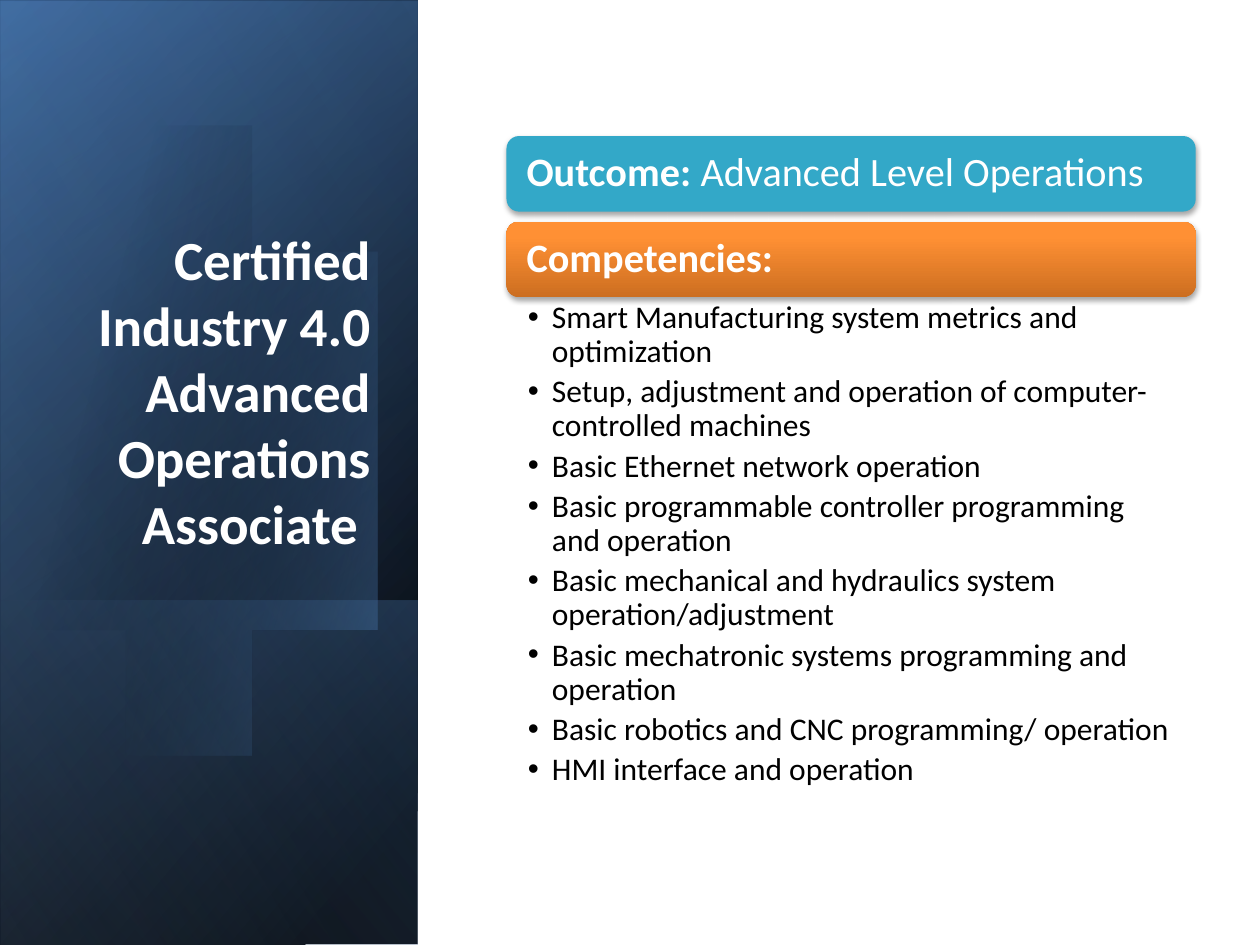
from lxml import etree
from pptx import Presentation
from pptx.dml.color import RGBColor
from pptx.enum.shapes import MSO_SHAPE
from pptx.enum.text import MSO_ANCHOR, MSO_AUTO_SIZE, PP_ALIGN
from pptx.oxml.ns import qn
from pptx.util import Inches, Pt

RECTANGLE, ROUNDED = MSO_SHAPE.RECTANGLE, MSO_SHAPE.ROUNDED_RECTANGLE
TOP, MIDDLE, BOTTOM = MSO_ANCHOR.TOP, MSO_ANCHOR.MIDDLE, MSO_ANCHOR.BOTTOM
LEFT, RIGHT, NO_FIT = PP_ALIGN.LEFT, PP_ALIGN.RIGHT, MSO_AUTO_SIZE.NONE

TITLE = "Certified Industry 4.0 Advanced Operations Associate "
COMPETENCIES = [
    "Smart Manufacturing system metrics and optimization",
    "Setup, adjustment and operation of computer-controlled machines",
    "Basic Ethernet network operation",
    "Basic programmable controller programming and operation",
    "Basic mechanical and hydraulics system operation/adjustment",
    "Basic mechatronic systems programming and operation",
    "Basic robotics and CNC programming/ operation",
    "HMI interface and operation",
]
BARS = [
    ([("Outcome: ", True), ("Advanced Level Operations", False)],
     [(0, "33A8C8", 100), (100, "33A8C8", 100)]),
    ([("Competencies:", True)],
     [(0, "CC6E20", 100), (80, "FF9034", 100), (100, "FF9136", 100)]),
]
BAR_LEFT, BAR_TOP, BAR_WIDTH, BAR_HEIGHT, BAR_STEP = 4.02, 1.08, 5.47, 0.6, 0.68

SIDE = (-2.09, 2.09, 7.5, 3.31)
PANELS = [
    (SIDE, 50, [(8, "000000", 100), (100, "376092", 100)]),
    ((-2.09, 2.11, 7.5, 3.31), 30, [(0, "000000", 0), (99, "4F81BD", 46)]),
    ((0.29, 4.48, 2.74, 3.31), 130, [(2, "4F81BD", 29), (100, "000000", 30)]),
]
SHEEN = (SIDE, 120, [(0, "000000", 0), (99, "95B3D7", 11)])
OVAL_STOPS = [(29, "000000", 0), (100, "4F81BD", 43)]
OVAL_START = (0.96, 1.14)
OVAL_CURVES = [
    [(1.71, 1.22), (2.44, 1.92), (2.73, 2.9)],
    [(3.07, 4.12), (2.62, 5.31), (1.71, 5.57)],
    [(1.14, 5.74), (0.53, 5.5), (0.07, 5)],
    [(-0.03, 4.88)],
    [(-0.25, 1.66)],
    [(-0.15, 1.54)],
    [(0.02, 1.37), (0.22, 1.25), (0.45, 1.18)],
    [(0.62, 1.13), (0.79, 1.12), (0.96, 1.14)],
]


def add_element(parent, tag, **attributes):
    """Append a DrawingML element with the given attributes."""
    element = etree.SubElement(parent, qn(tag))
    for name, value in attributes.items():
        element.set(name, str(value))
    return element


def add_color(parent, color, alpha):
    """Append a colour with its opacity in percent."""
    add_element(add_element(parent, "a:srgbClr", val=color), "a:alpha", val=alpha * 1000)


def set_gradient(shape, stops, angle):
    """Give a shape a linear gradient and no line or shadow."""
    shape.line.fill.background()
    shape.shadow.inherit = False
    gradient = etree.Element(qn("a:gradFill"), rotWithShape="1")
    stop_list = add_element(gradient, "a:gsLst")
    for position, color, alpha in stops:
        add_color(add_element(stop_list, "a:gs", pos=position * 1000), color, alpha)
    add_element(gradient, "a:lin", ang=angle * 60000, scaled=0)
    properties = shape._element.spPr
    properties.find(qn("a:ln")).addprevious(gradient)


def add_panel(slide, box, angle, stops):
    """Add a mirrored rectangle turned by a quarter."""
    panel = slide.shapes.add_shape(RECTANGLE, *map(Inches, box))
    panel.rotation = 90
    panel._element.spPr.find(qn("a:xfrm")).set("flipH", "1")
    set_gradient(panel, stops, angle)


def curve_points(start, curves, steps=24):
    """Yield points along joined straight lines and cubic curves."""
    for curve in curves:
        if len(curve) == 1:
            yield curve[0]
        else:
            controls = [start, *curve]
            for step in range(1, steps + 1):
                t = step / steps
                weights = ((1 - t) ** 3, 3 * t * (1 - t) ** 2, 3 * t * t * (1 - t), t ** 3)
                yield tuple(sum(w * point[axis] for w, point in zip(weights, controls))
                            for axis in (0, 1))
        start = curve[-1]


def add_oval(slide):
    """Add the translucent tilted oval."""
    builder = slide.shapes.build_freeform(*OVAL_START, scale=Inches(1))
    builder.add_line_segments(list(curve_points(OVAL_START, OVAL_CURVES)), close=True)
    set_gradient(builder.convert_to_shape(), OVAL_STOPS, 14)


def format_frame(frame, anchor, margins):
    """Set wrapping, anchor and the left, top, right and bottom margins."""
    names = ("margin_left", "margin_top", "margin_right", "margin_bottom")
    values = {"word_wrap": True, "auto_size": NO_FIT, "vertical_anchor": anchor,
              **dict(zip(names, map(Inches, margins)))}
    for name, value in values.items():
        setattr(frame, name, value)


def add_run(paragraph, text, size, color, bold=False):
    """Add a formatted run."""
    run = paragraph.add_run()
    run.text = text
    for name, value in {"name": "Calibri", "size": Pt(size), "bold": bold}.items():
        setattr(run.font, name, value)
    run.font.color.rgb = RGBColor.from_string(color)


def place(shape, box):
    """Move and size a shape in inches."""
    for name, value in zip(("left", "top", "width", "height"), box):
        setattr(shape, name, Inches(value))


def add_bar(slide, top, runs, stops):
    """Add a rounded heading bar with a soft shadow."""
    bar = slide.shapes.add_shape(
        ROUNDED, *map(Inches, (BAR_LEFT, top, BAR_WIDTH, BAR_HEIGHT)))
    set_gradient(bar, stops, 270)
    shadow = add_element(bar._element.spPr.find(qn("a:effectLst")), "a:outerShdw",
                         blurRad=Pt(3.1), dist=Pt(1.8), dir=90 * 60000, rotWithShape=0)
    add_color(shadow, "000000", 35)
    format_frame(bar.text_frame, MIDDLE, (0.13, 0.1, 0.13, 0.1))
    paragraph = bar.text_frame.paragraphs[0]
    paragraph.alignment, paragraph.line_spacing = LEFT, 0.9
    for text, bold in runs:
        add_run(paragraph, text, 23, "FFFFFF", bold)


def fill_title(title):
    """Place and write the slide title."""
    place(title, (0.48, 1.84, 2.56, 2.62))
    format_frame(title.text_frame, BOTTOM, (0.1, 0.05, 0.1, 0.05))
    paragraph = title.text_frame.paragraphs[0]
    paragraph.alignment = RIGHT
    add_run(paragraph, TITLE, 31.5, "FFFFFF", True)


def fill_list(body):
    """Place and write the bulleted competencies."""
    place(body, (BAR_LEFT, BAR_TOP + BAR_STEP + BAR_HEIGHT, BAR_WIDTH, 4.17))
    frame = body.text_frame
    format_frame(frame, TOP, (0.17, 0.03, 0.18, 0.03))
    for index, text in enumerate(COMPETENCIES):
        paragraph = frame.add_paragraph() if index else frame.paragraphs[0]
        values = {"level": 1, "line_spacing": 0.9, "space_before": Pt(0),
                  "space_after": Pt(3.6), "alignment": LEFT}
        for name, value in values.items():
            setattr(paragraph, name, value)
        properties = paragraph._p.get_or_add_pPr()
        properties.set("marL", str(Inches(0.19)))
        properties.set("indent", str(-Inches(0.19)))
        add_element(properties, "a:buChar", char="•")
        add_run(paragraph, text, 18, "000000")


def main():
    """Build and save the slide."""
    presentation = Presentation()
    presentation.slide_width, presentation.slide_height = Inches(10), Inches(7.5)
    slide = presentation.slides.add_slide(presentation.slide_layouts[1])
    title, body = slide.shapes.title, slide.placeholders[1]
    for panel in PANELS:
        add_panel(slide, *panel)
    add_oval(slide)
    add_panel(slide, *SHEEN)
    slide.shapes._spTree.append(title._element)
    fill_title(title)
    for index, (runs, stops) in enumerate(BARS):
        add_bar(slide, BAR_TOP + index * BAR_STEP, runs, stops)
    slide.shapes._spTree.append(body._element)
    fill_list(body)
    presentation.save("out.pptx")


if __name__ == "__main__":
    main()
